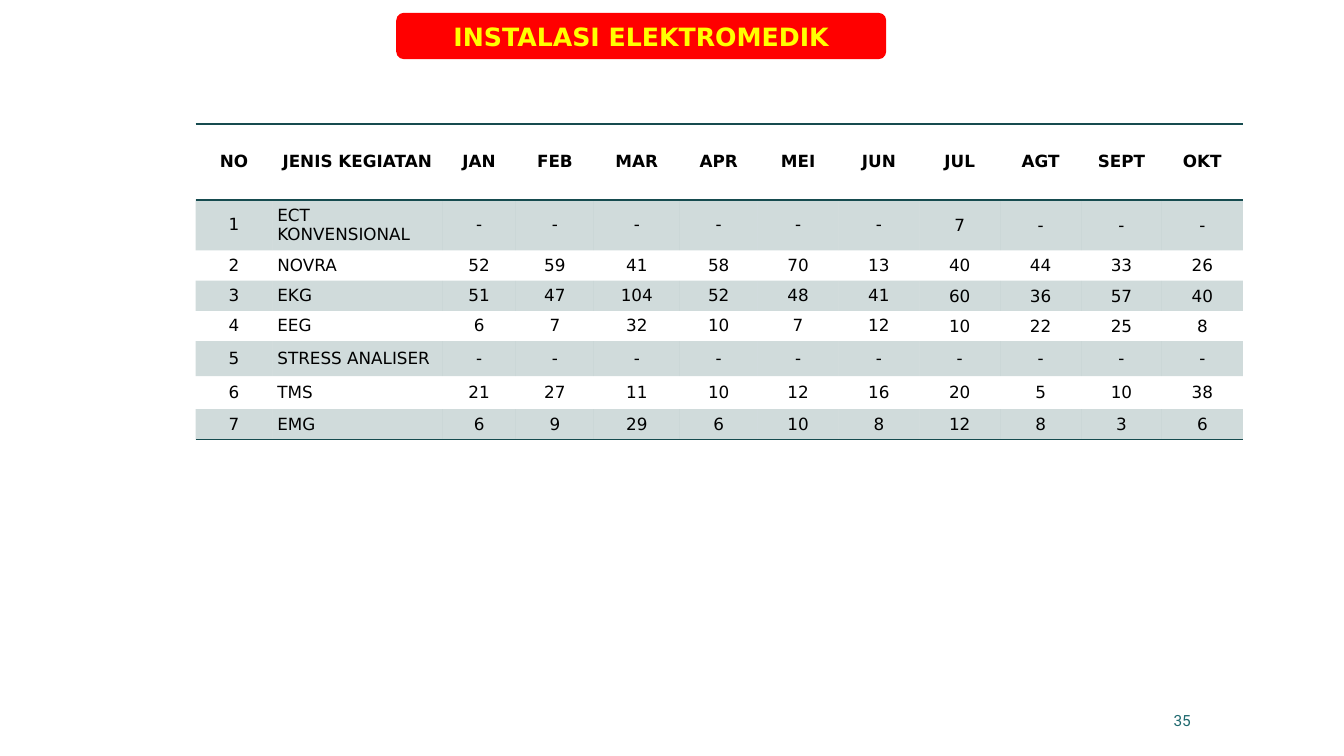
from dataclasses import dataclass

from lxml import etree
from pptx import Presentation
from pptx.dml.color import RGBColor
from pptx.enum.shapes import MSO_SHAPE
from pptx.enum.text import MSO_ANCHOR, PP_ALIGN
from pptx.oxml.ns import qn
from pptx.util import Inches, Pt

ROUNDED = MSO_SHAPE.ROUNDED_RECTANGLE
MIDDLE = MSO_ANCHOR.MIDDLE
LEFT, CENTER, RIGHT = PP_ALIGN.LEFT, PP_ALIGN.CENTER, PP_ALIGN.RIGHT
PLAIN_TABLE_STYLE = "{2D5ABB26-0587-4C30-8999-92F81FD0307C}"


@dataclass(frozen=True)
class Theme:
    font: str = "DejaVu Sans"
    number_font: str = "Roboto"
    banner: str = "FF0000"
    banner_text: str = "FFFF00"
    ink: str = "000000"
    teal: str = "164B4F"
    number: str = "1F696F"
    band_opacity: int = 20
    title_size: int = 18
    table_size: int = 12
    number_size: int = 11
    rule_width: int = 1


THEME = Theme()

SLIDE_WIDTH, SLIDE_HEIGHT = Inches(13.33), Inches(7.5)
BANNER_BOX = (29.48, 1.7, 36.46, 6.13)
TABLE_BOX = (14.55, 16.4, 77.94, 41.4)
NUMBER_BOX = (66.02, 92.67, 23.33, 5.33)

COLUMN_SHARES = [0.76, 1.68, 0.73, 0.77, 0.85, 0.77] + [0.8] * 6
ROW_SHARES = [0.76, 0.49, 0.3, 0.3, 0.3, 0.35, 0.33, 0.3]
FIRST_TIGHT_MONTH = 8

HEADER = ["NO", "JENIS KEGIATAN", "JAN", "FEB", "MAR", "APR",
          "MEI", "JUN", "JUL", "AGT", "SEPT", "OKT"]
ACTIVITIES = [
    ("ECT KONVENSIONAL", "- - - - - - 7 - - -"),
    ("NOVRA", "52 59 41 58 70 13 40 44 33 26"),
    ("EKG", "51 47 104 52 48 41 60 36 57 40"),
    ("EEG", "6 7 32 10 7 12 10 22 25 8"),
    ("STRESS ANALISER", "- - - - - - - - - -"),
    ("TMS", "21 27 11 10 12 16 20 5 10 38"),
    ("EMG", "6 9 29 6 10 8 12 8 3 6"),
]


def place(box):
    left, top, width, height = box
    return (int(SLIDE_WIDTH * left / 100), int(SLIDE_HEIGHT * top / 100),
            int(SLIDE_WIDTH * width / 100), int(SLIDE_HEIGHT * height / 100))


def write(frame, text, align, size, color, bold=False, font=THEME.font):
    frame.text = text
    paragraph = frame.paragraphs[0]
    paragraph.alignment = align
    for run in paragraph.runs:
        run.font.name = font
        run.font.size = Pt(size)
        run.font.bold = bold
        run.font.color.rgb = RGBColor.from_string(color)


def tint_cell(cell):
    cell.fill.solid()
    cell.fill.fore_color.rgb = RGBColor.from_string(THEME.teal)
    color = cell._tc.tcPr.find(qn("a:solidFill"))[0]
    etree.SubElement(color, qn("a:alpha"), val=str(THEME.band_opacity * 1000))


def rule_cell(cell, sides):
    properties = cell._tc.get_or_add_tcPr()
    for position, side in enumerate(sides):
        line = etree.Element(qn(f"a:{side}"), w=str(Pt(THEME.rule_width)))
        fill = etree.SubElement(line, qn("a:solidFill"))
        etree.SubElement(fill, qn("a:srgbClr"), val=THEME.teal)
        properties.insert(position, line)


def add_banner(slide, box):
    banner = slide.shapes.add_shape(ROUNDED, *place(box))
    banner.shadow.inherit = False
    banner.fill.solid()
    banner.fill.fore_color.rgb = RGBColor.from_string(THEME.banner)
    banner.line.fill.background()
    banner.text_frame.vertical_anchor = MIDDLE
    write(banner.text_frame, "INSTALASI ELEKTROMEDIK", CENTER,
          THEME.title_size, THEME.banner_text, bold=True)


def format_cell(cell, row, column, text):
    tight = row > 0 and column >= FIRST_TIGHT_MONTH
    inset = Inches(0.01 if tight else 0.05)
    cell.margin_left = cell.margin_right = cell.margin_top = inset
    cell.margin_bottom = 0 if tight else inset
    cell.vertical_anchor = MIDDLE
    align = LEFT if row > 0 and column == 1 else CENTER
    write(cell.text_frame, text, align, THEME.table_size, THEME.ink, bold=row == 0)
    if row % 2:
        tint_cell(cell)
    else:
        cell.fill.background()
    if row == 0:
        rule_cell(cell, ["lnT", "lnB"])
    elif row == len(ACTIVITIES):
        rule_cell(cell, ["lnB"])


def add_activity_table(slide, box):
    left, top, width, height = place(box)
    records = [HEADER] + [
        [str(number), activity, *counts.split()]
        for number, (activity, counts) in enumerate(ACTIVITIES, 1)
    ]
    table = slide.shapes.add_table(
        len(records), len(HEADER), left, top, width, height).table
    table.first_row = table.horz_banding = False
    table._tbl.tblPr.find(qn("a:tableStyleId")).text = PLAIN_TABLE_STYLE
    for column, share in zip(table.columns, COLUMN_SHARES):
        column.width = int(width * share / sum(COLUMN_SHARES))
    for row, share in zip(table.rows, ROW_SHARES):
        row.height = int(height * share / sum(ROW_SHARES))
    for row, record in enumerate(records):
        for column, text in enumerate(record):
            format_cell(table.cell(row, column), row, column, text)


def add_page_number(slide, box):
    frame = slide.shapes.add_textbox(*place(box)).text_frame
    frame.word_wrap = True
    frame.vertical_anchor = MIDDLE
    write(frame, "35", RIGHT, THEME.number_size, THEME.number,
          font=THEME.number_font)


def main():
    deck = Presentation()
    deck.slide_width, deck.slide_height = SLIDE_WIDTH, SLIDE_HEIGHT
    slide = deck.slides.add_slide(deck.slide_layouts[6])
    add_page_number(slide, NUMBER_BOX)
    add_banner(slide, BANNER_BOX)
    add_activity_table(slide, TABLE_BOX)
    deck.save("out.pptx")


if __name__ == "__main__":
    main()
